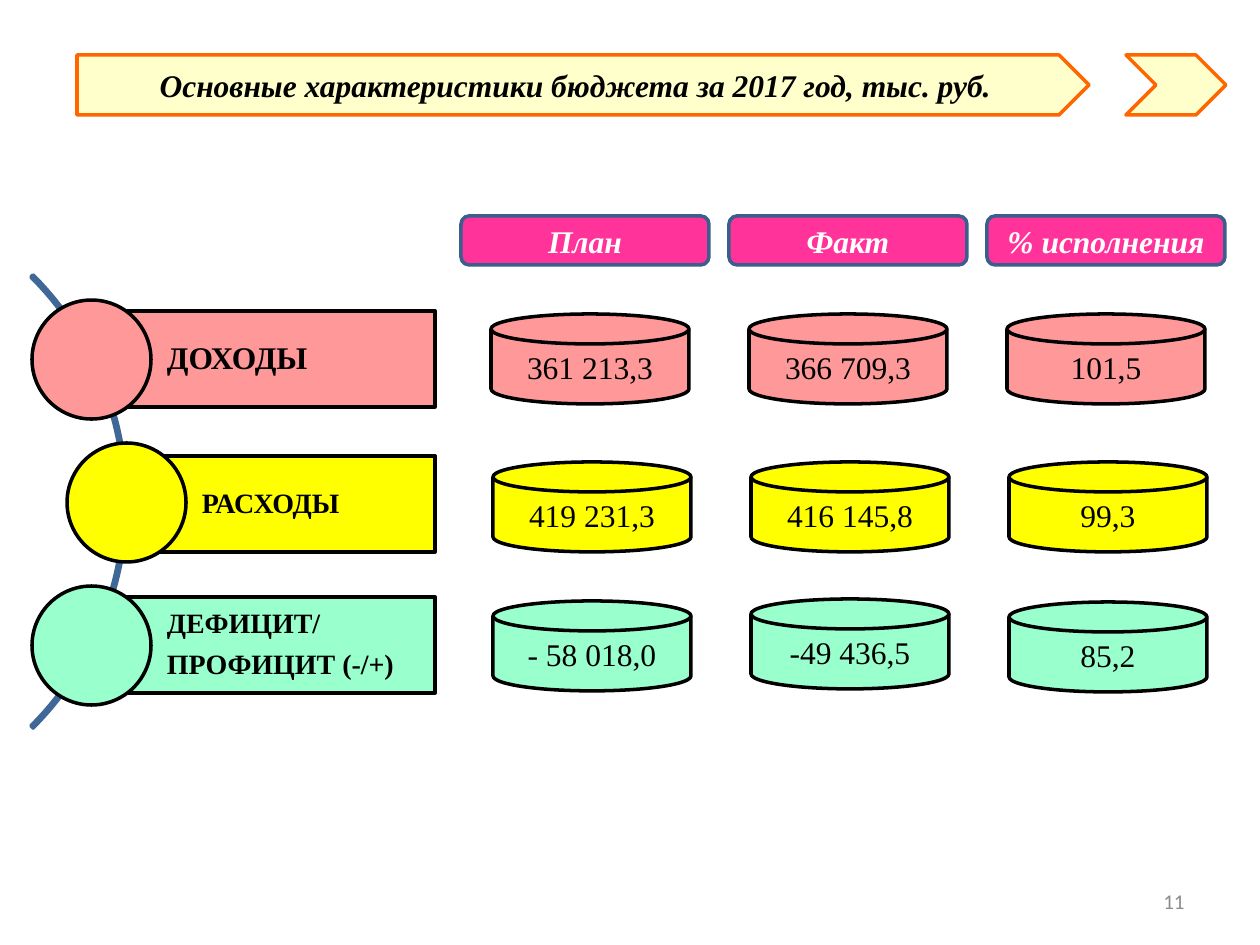
from pptx import Presentation
from pptx.dml.color import RGBColor
from pptx.enum.shapes import MSO_SHAPE
from pptx.enum.text import MSO_ANCHOR, PP_ALIGN
from pptx.util import Emu, Pt

PLATE, CHEVRON = MSO_SHAPE.PENTAGON, MSO_SHAPE.CHEVRON
ARC, RECT, OVAL = MSO_SHAPE.BLOCK_ARC, MSO_SHAPE.RECTANGLE, MSO_SHAPE.OVAL
ROUND, DISK = MSO_SHAPE.ROUNDED_RECTANGLE, MSO_SHAPE.FLOWCHART_MAGNETIC_DISK
MIDDLE = MSO_ANCHOR.MIDDLE
LEFT, CENTER, RIGHT = PP_ALIGN.LEFT, PP_ALIGN.CENTER, PP_ALIGN.RIGHT

SERIF = "Times New Roman"
BLACK, WHITE, GRAY = "000000", "FFFFFF", "8C8C8C"
CREAM, ORANGE, PINK = "FFFFCC", "FF6600", "FF3399"
NAVY, BLUE = "3A5F8C", "3F6797"

# Heading, left edge, width
HEADS = [("План", 461, 248), ("Факт", 729, 238), ("% исполнения", 987, 238)]

# Label lines, size, fill, circle left, bar top, disk left, values, disk tops
ROWS = [
    (["ДОХОДЫ"], 18, "FF9999", 32, 311, 491,
     ["361 213,3", "366 709,3", "101,5"], [314, 314, 314]),
    (["РАСХОДЫ"], 16, "FFFF00", 67, 456, 493,
     ["419 231,3", "416 145,8", "99,3"], [462, 462, 462]),
    (["ДЕФИЦИТ/", "ПРОФИЦИТ (-/+)"], 16, "99FFCC", 32, 597, 493,
     ["- 58 018,0", "-49 436,5", "85,2"], [601, 599, 602]),
]
BALL, BALL_TOP, BALL_STEP = 119, 300, 143
BAR_END, BAR_HIGH = 435, 96
DISK_STEP, DISK_WIDE, DISK_HIGH = 258, 198, 90


def px(n):
    return Emu(round(n * 914400 / 126))


def tint(code):
    return RGBColor.from_string(code)


def box(slide, kind, x, y, w, h, fill=None, line=BLACK):
    item = slide.shapes.add_shape(kind, px(x), px(y), px(w), px(h))
    item.shadow.inherit = False
    if fill:
        item.fill.solid()
        item.fill.fore_color.rgb = tint(fill)
    else:
        item.fill.background()
    item.line.color.rgb = tint(line)
    item.line.width = Pt(2)
    return item


def write(item, lines, size=18, color=BLACK, font=SERIF, bold=False,
          italic=False, align=CENTER, inset=None, space=None, after=None):
    frame = item.text_frame
    frame.word_wrap = True
    frame.vertical_anchor = MIDDLE
    if inset is not None:
        frame.margin_left = px(inset)
    for i, line in enumerate(lines):
        para = frame.paragraphs[0] if i == 0 else frame.add_paragraph()
        para.alignment = align
        para.line_spacing = space
        para.space_after = after
        run = para.add_run()
        run.text = line
        run.font.name = font
        run.font.size = Pt(size)
        run.font.bold = bold
        run.font.italic = italic
        run.font.color.rgb = tint(color)


def title(slide):
    plate = box(slide, PLATE, 77, 55, 1012, 60, CREAM, ORANGE)
    write(plate, ["Основные характеристики бюджета за 2017 год, тыс. руб."],
          bold=True, italic=True)
    box(slide, CHEVRON, 1126, 55, 100, 60, CREAM, ORANGE)


def number(slide):
    item = slide.shapes.add_textbox(px(903), px(876), px(294), px(50))
    write(item, ["11"], size=12, color=GRAY, font="Calibri", align=RIGHT)


def curve(slide):
    arc = box(slide, ARC, -514, 181, 641, 641, line=BLUE)
    for i, value in enumerate([189, 27, 0.005]):
        arc.adjustments[i] = value


def heads(slide):
    for text, x, w in HEADS:
        item = box(slide, ROUND, x, 216, w, 49, PINK, NAVY)
        write(item, [text], color=WHITE, bold=True, italic=True)


def label(slide, i, lines, size, fill, left, top):
    # The bar starts at the middle of its circle
    start = left + BALL // 2
    bar = box(slide, RECT, start, top, BAR_END - start, BAR_HIGH, fill)
    write(bar, lines, size=size, bold=True, align=LEFT, inset=76,
          space=0.9, after=Pt(6))
    box(slide, OVAL, left, BALL_TOP + i * BALL_STEP, BALL, BALL, fill)


def disks(slide, fill, left, values, tops):
    for i, (value, top) in enumerate(zip(values, tops)):
        item = box(slide, DISK, left + i * DISK_STEP, top,
                   DISK_WIDE, DISK_HIGH, fill)
        write(item, [value])


def main():
    deck = Presentation()
    deck.slide_width, deck.slide_height = px(1260), px(945)
    slide = deck.slides.add_slide(deck.slide_layouts[6])
    title(slide)
    number(slide)
    curve(slide)
    heads(slide)
    for i, (lines, size, fill, left, top, start, values, tops) in enumerate(ROWS):
        label(slide, i, lines, size, fill, left, top)
        disks(slide, fill, start, values, tops)
    deck.save("out.pptx")


if __name__ == "__main__":
    main()
